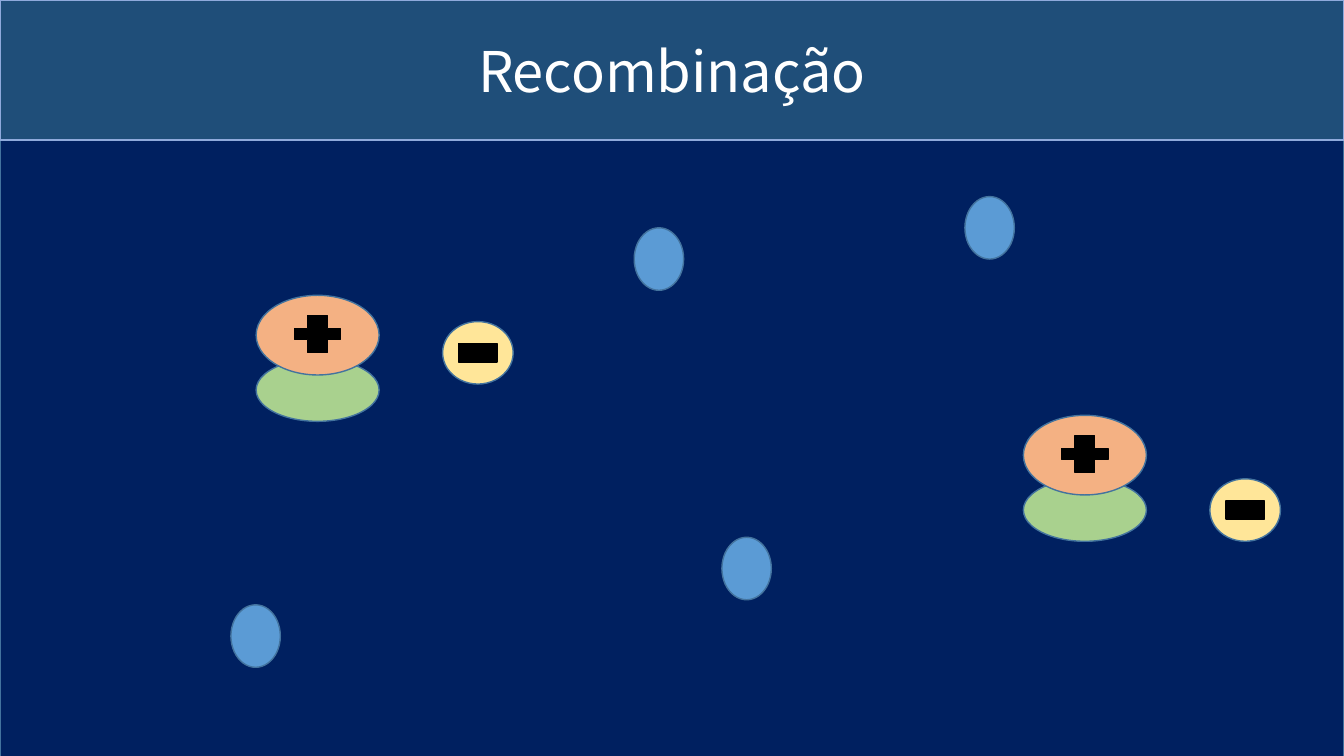
from pptx import Presentation
from pptx.dml.color import RGBColor
from pptx.enum.shapes import MSO_SHAPE
from pptx.enum.text import MSO_ANCHOR, PP_ALIGN
from pptx.util import Inches, Pt

RECTANGLE = MSO_SHAPE.RECTANGLE
OVAL = MSO_SHAPE.OVAL
PLUS = MSO_SHAPE.CROSS

COLORS = {
    "background": "002060",
    "banner": "1F4E79",
    "banner_line": "8FAADC",
    "outline": "43739E",
    "neutral": "5B9BD5",
    "base": "A9D18E",
    "positive": "F4B183",
    "negative": "FFE699",
    "sign": "000000",
    "title": "FFFFFF",
}


def add_figure(shapes, kind, left, top, width, height, fill, line="outline"):
    figure = shapes.add_shape(kind, Inches(left), Inches(top), Inches(width), Inches(height))
    figure.shadow.inherit = False
    figure.fill.solid()
    figure.fill.fore_color.rgb = RGBColor.from_string(COLORS[fill])
    figure.line.color.rgb = RGBColor.from_string(COLORS[line])
    figure.line.width = Pt(1)
    return figure


deck = Presentation()
deck.slide_width = Inches(13.33)
deck.slide_height = Inches(7.5)
page = deck.slides.add_slide(deck.slide_layouts[6])

# Background and title banner
add_figure(page.shapes, RECTANGLE, 0, 0.2, 13.33, 7.95, "background")
banner = add_figure(page.shapes, RECTANGLE, 0, 0, 13.33, 1.39, "banner", "banner_line")
banner.text_frame.vertical_anchor = MSO_ANCHOR.MIDDLE
para = banner.text_frame.paragraphs[0]
para.alignment = PP_ALIGN.CENTER
span = para.add_run()
span.text = "Recombinação"
title_format = {"name": "Noto Sans CJK KR", "size": Pt(40)}
for attribute, value in title_format.items():
    setattr(span.font, attribute, value)
span.font.color.rgb = RGBColor.from_string(COLORS["title"])

# Neutral particles
for left, top in [(6.29, 2.26), (7.16, 5.33), (2.29, 6), (9.57, 1.95)]:
    add_figure(page.shapes, OVAL, left, top, 0.49, 0.62, "neutral")

# Positive ions, each resting on a green base
for left, top in [(2.54, 2.93), (10.15, 4.12)]:
    ion = page.shapes.add_group_shape()
    add_figure(ion.shapes, OVAL, left, top + 0.63, 1.22, 0.62, "base")
    add_figure(ion.shapes, OVAL, left, top, 1.22, 0.79, "positive")
    plus = add_figure(ion.shapes, PLUS, left + 0.38, top + 0.2, 0.46, 0.37, "sign", "sign")
    plus.adjustments[0] = 0.356

# Negative electrons
for left, top in [(4.39, 3.19), (12, 4.75)]:
    electron = page.shapes.add_group_shape()
    add_figure(electron.shapes, OVAL, left, top, 0.7, 0.62, "negative")
    add_figure(electron.shapes, RECTANGLE, left + 0.16, top + 0.22, 0.38, 0.18, "sign", "sign")

deck.save("out.pptx")
